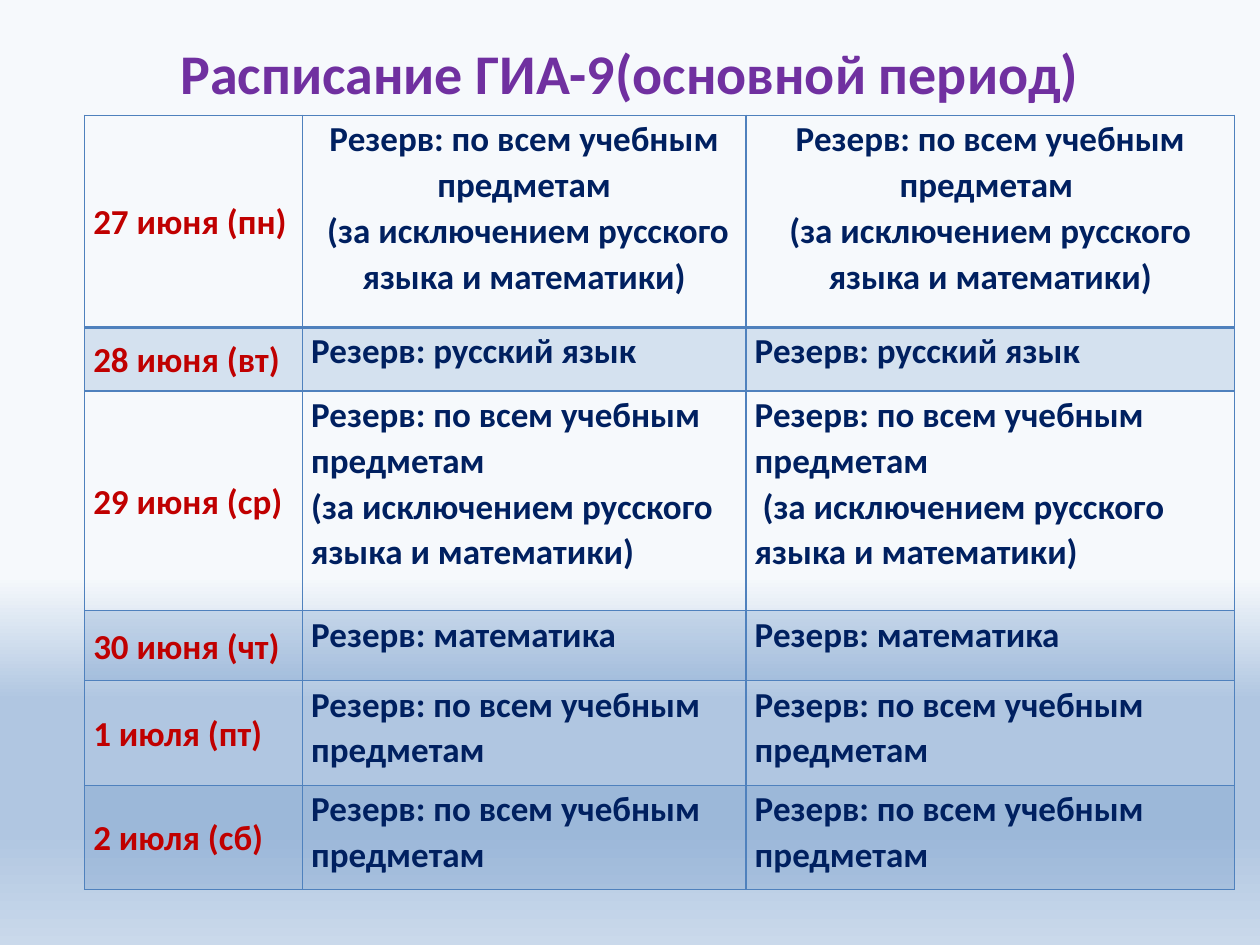
from dataclasses import dataclass

from lxml.etree import SubElement
from pptx import Presentation
from pptx.dml.color import RGBColor as Color
from pptx.enum.text import MSO_ANCHOR as Anchor, PP_ALIGN as Align
from pptx.oxml import parse_xml
from pptx.oxml.ns import nsdecls, qn
from pptx.util import Pt


@dataclass(frozen=True)
class Theme:
    font: str = "Calibri"
    title_color: str = "7030A0"
    date_color: str = "C00000"
    subject_color: str = "002060"
    accent: str = "4F81BD"
    band_opacity: int = 20
    title_size: int = 32
    table_size: int = 20
    line_spacing: float = 1.07
    backdrop: tuple = ((61, "F6F9FC"), (74, "B0C6E1"), (88, "B0C6E1"), (100, "CAD9EB"))


THEME = Theme()
COLUMN_WIDTHS = (124.5, 253.5, 279.3)
ROW_HEIGHTS = (121, 36.5, 125.5, 40, 59.8, 59.5)
ALL_SUBJECTS = "Резерв: по всем учебным предметам"
EXCEPTION = "(за исключением русского языка и математики)"
RUSSIAN = "Резерв: русский язык"
MATHS = "Резерв: математика"
SCHEDULE = (
    ("27 июня (пн)", f"{ALL_SUBJECTS}\n {EXCEPTION}", f"{ALL_SUBJECTS} \n{EXCEPTION}"),
    ("28 июня (вт)", RUSSIAN, RUSSIAN),
    ("29 июня (ср)", f"{ALL_SUBJECTS}\n{EXCEPTION}", f"{ALL_SUBJECTS}\n {EXCEPTION}"),
    ("30 июня (чт)", MATHS, MATHS),
    ("1 июля (пт)", ALL_SUBJECTS, ALL_SUBJECTS),
    ("2 июля (сб)", ALL_SUBJECTS, ALL_SUBJECTS),
)


def paint_background(page):
    fill = page.background.fill
    fill.gradient()
    fill.gradient_angle = 270
    stops = page.background._cSld.find(".//" + qn("a:gsLst"))
    for stop in list(stops):
        stops.remove(stop)
    for position, color in THEME.backdrop:
        stop = SubElement(stops, qn("a:gs"), pos=str(position * 1000))
        SubElement(stop, qn("a:srgbClr"), val=color)


def format_text(frame, size, color, align, spacing=None):
    for para in frame.paragraphs:
        para.alignment = align
        para.line_spacing = spacing
        for span in para.runs:
            span.font.name = THEME.font
            span.font.size = Pt(size)
            span.font.bold = True
            span.font.color.rgb = Color.from_string(color)


def add_title(page, text):
    title = page.shapes.title
    title.left, title.top, title.width, title.height = Pt(36), Pt(21.6), Pt(648), Pt(38.9)
    title.text_frame.text = text
    title.text_frame.vertical_anchor = Anchor.MIDDLE
    format_text(title.text_frame, THEME.title_size, THEME.title_color, Align.CENTER)


def fill_cell(cell, banded):
    if not banded:
        cell.fill.background()
        return
    cell.fill.solid()
    cell.fill.fore_color.rgb = Color.from_string(THEME.accent)
    color = cell._tc.tcPr.find(".//" + qn("a:srgbClr"))
    SubElement(color, qn("a:alpha"), val=str(THEME.band_opacity * 1000))


def border_cell(cell, top, bottom):
    widths = (("lnL", 1), ("lnR", 1), ("lnT", top), ("lnB", bottom))
    for index, (side, width) in enumerate(widths):
        line = parse_xml(
            f'<a:{side} {nsdecls("a")} w="{Pt(width)}"><a:solidFill>'
            f'<a:srgbClr val="{THEME.accent}"/></a:solidFill></a:{side}>'
        )
        cell._tc.tcPr.insert(index, line)


def write_cell(cell, text, row, column):
    is_date = column == 0
    cell.margin_left = cell.margin_right = Pt(5)
    cell.margin_top = cell.margin_bottom = 0
    cell.vertical_anchor = Anchor.MIDDLE if is_date else Anchor.TOP
    cell.text_frame.text = text
    color = THEME.date_color if is_date else THEME.subject_color
    align = Align.CENTER if row == 0 and not is_date else Align.LEFT
    format_text(cell.text_frame, THEME.table_size, color, align, THEME.line_spacing)
    fill_cell(cell, banded=row % 2 == 1)
    border_cell(cell, top=2 if row == 1 else 1, bottom=2 if row == 0 else 1)


def add_schedule(page):
    frame = page.shapes.add_table(
        len(SCHEDULE), len(COLUMN_WIDTHS), Pt(48.3), Pt(66),
        Pt(sum(COLUMN_WIDTHS)), Pt(sum(ROW_HEIGHTS)),
    )
    table = frame.table
    table.first_row = table.horz_banding = False
    for column, width in zip(table.columns, COLUMN_WIDTHS):
        column.width = Pt(width)
    for row, height in zip(table.rows, ROW_HEIGHTS):
        row.height = Pt(height)
    for row, texts in enumerate(SCHEDULE):
        for column, text in enumerate(texts):
            write_cell(table.cell(row, column), text, row, column)


def main():
    deck = Presentation()
    deck.slide_width, deck.slide_height = Pt(720), Pt(540)
    page = deck.slides.add_slide(deck.slide_layouts[5])
    paint_background(page)
    add_title(page, "Расписание ГИА-9(основной период)")
    add_schedule(page)
    deck.save("out.pptx")


if __name__ == "__main__":
    main()
